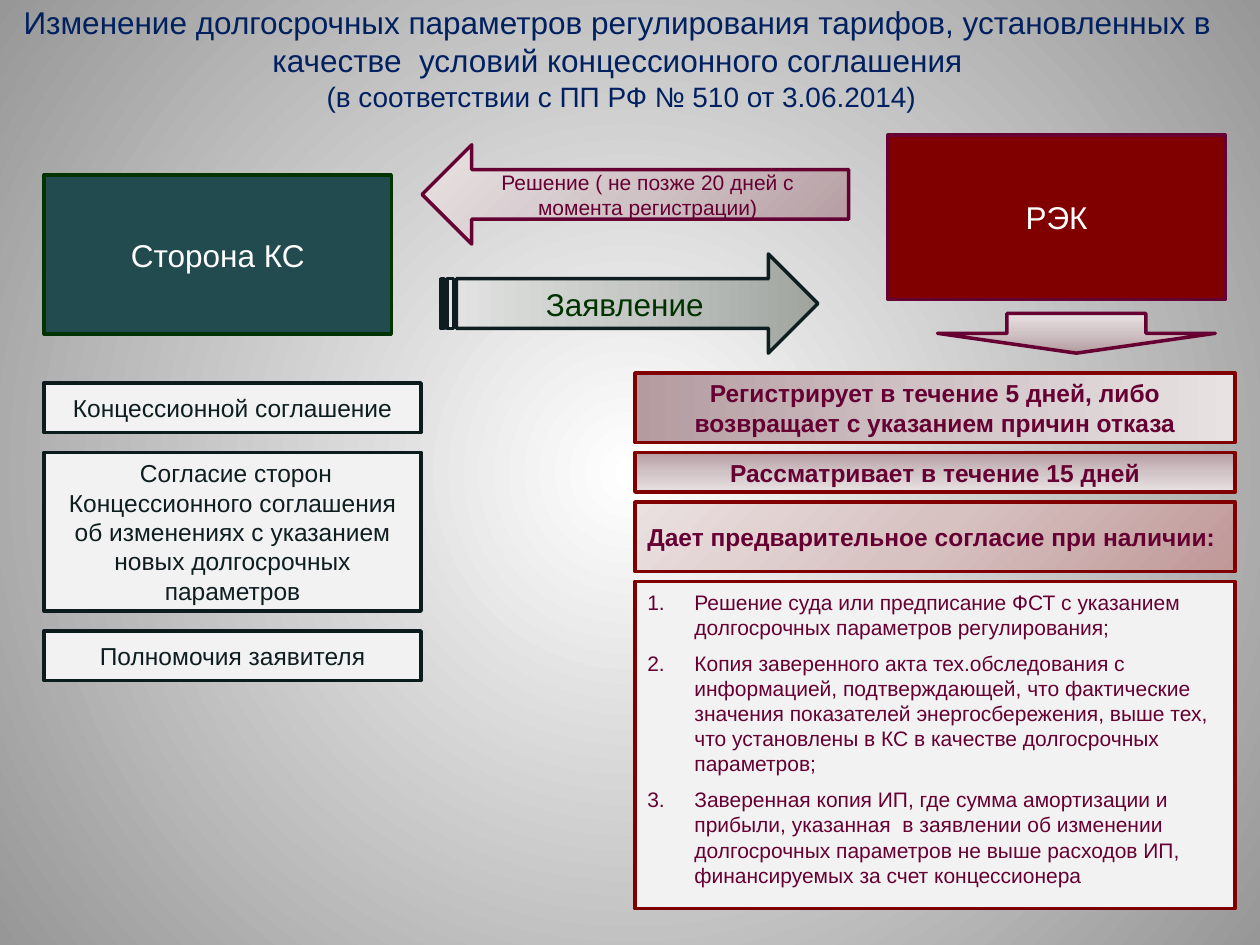
from lxml import etree
from pptx import Presentation
from pptx import util as u
from pptx.dml.color import RGBColor
from pptx.enum import shapes, text
from pptx.oxml import ns

NAVY = RGBColor(0x00, 0x20, 0x60)
WHITE = RGBColor(0xFF, 0xFF, 0xFF)
GREY = RGBColor(0x97, 0x97, 0x97)
PALE = RGBColor(0xF2, 0xF2, 0xF2)
TEAL = RGBColor(0x22, 0x4B, 0x50)
GREEN = RGBColor(0x00, 0x33, 0x00)
INK = RGBColor(0x0E, 0x1E, 0x20)
DARK_EDGE = RGBColor(0x0C, 0x1C, 0x1D)
RED = RGBColor(0x80, 0x00, 0x00)
PLUM = RGBColor(0x66, 0x00, 0x33)

BACKDROP = ((0, WHITE), (100, GREY))
MAUVE = ((0, RGBColor(0xB4, 0x9B, 0xA0)), (50, RGBColor(0xD0, 0xC3, 0xC6)),
         (100, RGBColor(0xE8, 0xE2, 0xE3)))
ROSE = ((0, RGBColor(0xC0, 0x98, 0x98)), (50, RGBColor(0xD7, 0xC1, 0xC1)),
        (100, RGBColor(0xEB, 0xE1, 0xE1)))
SAGE = ((0, RGBColor(0x9F, 0xA4, 0x9F)), (50, RGBColor(0xC5, 0xC8, 0xC5)),
        (100, RGBColor(0xE3, 0xE4, 0xE3)))

KIND = shapes.MSO_SHAPE
ALIGN = text.PP_ALIGN


def add_child(parent, tag, **attributes):
    child = etree.SubElement(parent, ns.qn(tag))
    for name, value in attributes.items():
        child.set(name, str(value))
    return child


def set_gradient(fill, element, stops, angle=None, focus=None):
    """Linear gradient at an angle, or circular around focus (l, t, r, b in percent)."""
    fill.gradient()
    gradient = element.find(".//" + ns.qn("a:gradFill"))
    for child in list(gradient):
        gradient.remove(child)
    stop_list = add_child(gradient, "a:gsLst")
    for position, colour in stops:
        stop = add_child(stop_list, "a:gs", pos=position * 1000)
        add_child(stop, "a:srgbClr", val=colour)
    if focus is None:
        add_child(gradient, "a:lin", ang=angle * 60000, scaled=0)
    else:
        circle = add_child(gradient, "a:path", path="circle")
        sides = {side: value * 1000 for side, value in zip("ltrb", focus)}
        add_child(circle, "a:fillToRect", **sides)


def write(shape, paragraphs, size, colour, bold=False, align=ALIGN.CENTER):
    frame = shape.text_frame
    frame.word_wrap = True
    frame.vertical_anchor = text.MSO_ANCHOR.MIDDLE
    font_format = {"name": "Arial", "size": u.Pt(size), "bold": bold}
    for index, words in enumerate(paragraphs):
        paragraph = frame.paragraphs[0] if index == 0 else frame.add_paragraph()
        paragraph.alignment = align
        run = paragraph.add_run()
        run.text = words
        for name, value in font_format.items():
            setattr(run.font, name, value)
        run.font.color.rgb = colour
    return frame


def add_block(slide, box, edge, fill=None, kind=KIND.RECTANGLE, **gradient):
    shape = slide.shapes.add_shape(kind, *map(u.Cm, box))
    shape.shadow.inherit = False
    shape.line.color.rgb = edge
    shape.line.width = u.Pt(2)
    if gradient:
        set_gradient(shape.fill, shape._element, **gradient)
    else:
        shape.fill.solid()
        shape.fill.fore_color.rgb = fill
    return shape


def stack(top, heights, gap):
    """Yield the top and height of each row."""
    for height in heights:
        yield top, height
        top += height + gap


def add_title(slide, box):
    title = slide.shapes.add_textbox(*map(u.Cm, box))
    frame = write(title, (
        "Изменение долгосрочных параметров регулирования тарифов, "
        "установленных в качестве  условий концессионного соглашения",
        " (в соответствии с ПП РФ № 510 от 3.06.2014)"), 18, NAVY)
    frame.paragraphs[1].runs[0].font.size = u.Pt(16)


def add_exchange(slide, left, top):
    """The two parties and the arrows between them."""
    applicant = add_block(slide, (left, top + 0.81, 7, 3.2), GREEN, TEAL)
    write(applicant, ["Сторона КС"], 18, WHITE)

    request = add_block(slide, (left + 8, top + 2.4, 7.6, 2), INK,
                        kind=KIND.STRIPED_RIGHT_ARROW, stops=SAGE, angle=180)
    write(request, ["Заявление"], 18, GREEN)

    regulator = add_block(slide, (left + 17.01, top, 6.8, 3.32), PLUM, RED)
    write(regulator, ["РЭК"], 18, WHITE)

    decision = add_block(slide, (left + 7.62, top + 0.2, 8.6, 2), PLUM,
                         kind=KIND.LEFT_ARROW, stops=MAUVE, focus=(100, 100, 0, 0))
    write(decision, ["Решение ( не позже 20 дней с момента регистрации)"], 12, PLUM)

    add_block(slide, (left + 18.01, top + 3.6, 5.6, 0.8), PLUM,
              kind=KIND.DOWN_ARROW, stops=MAUVE, angle=270)


def add_documents(slide, left, top, width):
    documents = (
        "Концессионной соглашение",
        " Согласие сторон Концессионного соглашения об изменениях "
        "с указанием новых долгосрочных параметров",
        "Полномочия заявителя")
    for words, (row_top, height) in zip(documents, stack(top, (1, 3.2, 1), 0.4)):
        document = add_block(slide, (left, row_top, width, height), DARK_EDGE, PALE)
        write(document, [words], 14, INK)


def add_procedure(slide, left, top, width):
    steps = (
        ("Регистрирует в течение 5 дней, либо возвращает с указанием причин отказа",
         MAUVE, 0, ALIGN.CENTER),
        ("Рассматривает в течение 15 дней", MAUVE, 90, ALIGN.CENTER),
        ("Дает предварительное согласие при наличии:", ROSE, 225, ALIGN.LEFT))
    *step_rows, conditions_row = stack(top, (1.4, 0.8, 1.4, 6.6), 0.2)
    for (words, stops, angle, align), (row_top, height) in zip(steps, step_rows):
        step = add_block(slide, (left, row_top, width, height), RED,
                         stops=stops, angle=angle)
        write(step, [words], 14, PLUM, bold=True, align=align)
    row_top, height = conditions_row
    add_conditions(slide, (left, row_top, width, height))


def add_conditions(slide, box):
    frame = write(add_block(slide, box, RED, PALE), (
        "Решение суда или предписание ФСТ с указанием долгосрочных "
        "параметров регулирования;",
        "Копия заверенного акта тех.обследования с информацией, подтверждающей, "
        "что фактические значения показателей энергосбережения, выше тех, "
        "что установлены в КС в качестве долгосрочных параметров;",
        "Заверенная копия ИП, где сумма амортизации и прибыли, указанная  "
        "в заявлении об изменении долгосрочных параметров не выше расходов ИП, "
        "финансируемых за счет концессионера"), 12, PLUM, align=ALIGN.LEFT)
    frame.vertical_anchor = text.MSO_ANCHOR.TOP
    frame.margin_top = u.Cm(0.16)
    indent = u.Cm(0.95)
    for index, paragraph in enumerate(frame.paragraphs):
        if index:
            paragraph.space_before = u.Pt(6)
        properties = paragraph._p.get_or_add_pPr()
        properties.set("marL", str(indent))
        properties.set("indent", str(-indent))
        add_child(properties, "a:buFont", typeface="+mj-lt")
        add_child(properties, "a:buAutoNum", type="arabicPeriod")


def main():
    presentation = Presentation()
    presentation.slide_width, presentation.slide_height = u.Cm(25.4), u.Cm(19.05)
    slide = presentation.slides.add_slide(presentation.slide_layouts[6])
    set_gradient(slide.background.fill, slide._element, BACKDROP,
                 focus=(50, 50, 50, 50))
    add_title(slide, (0, 0, 24.9, 2.34))
    add_exchange(slide, 0.89, 2.72)
    add_documents(slide, 0.89, 7.72, 7.6)
    add_procedure(slide, 12.8, 7.52, 12.1)
    presentation.save("out.pptx")


if __name__ == "__main__":
    main()
